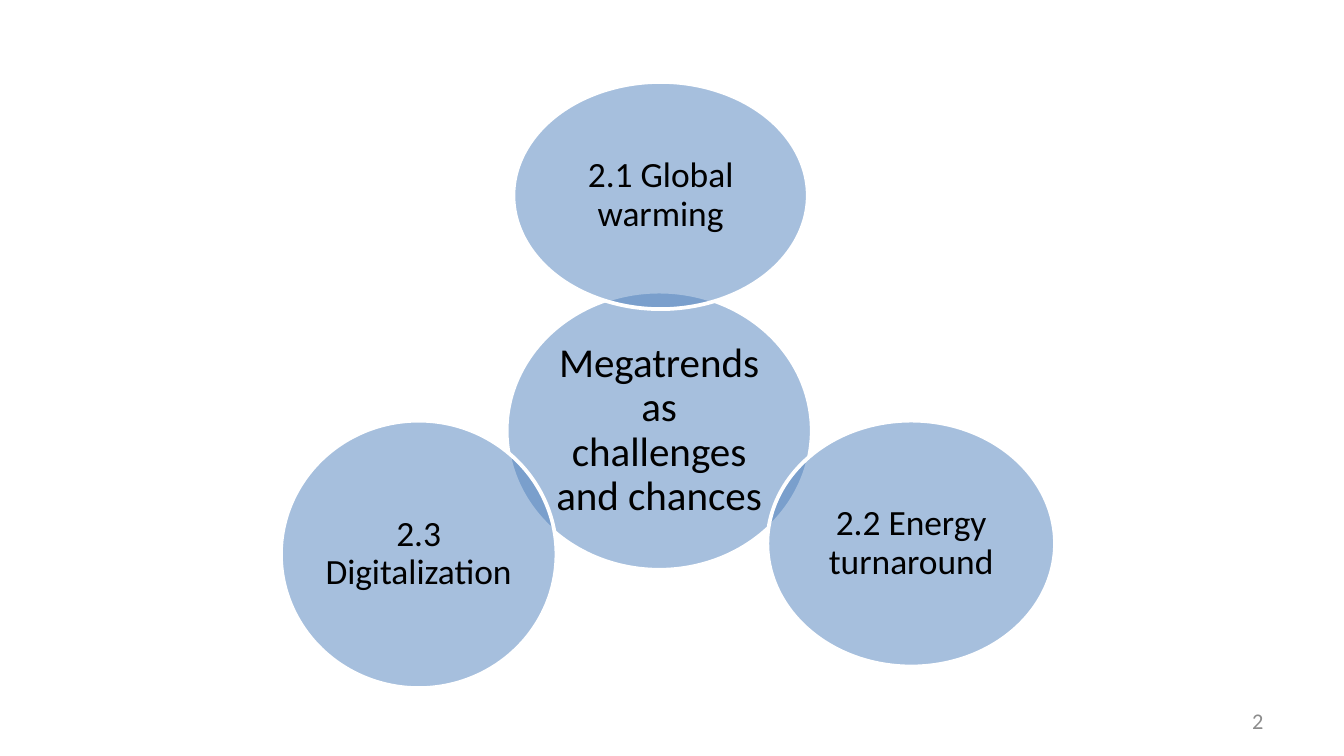
"""Builds the megatrends slide: a central circle overlapped by three topic circles."""
from dataclasses import dataclass

from lxml.etree import SubElement
from pptx import Presentation
from pptx.dml.color import RGBColor
from pptx.enum.shapes import MSO_SHAPE
from pptx.enum.text import MSO_ANCHOR, PP_ALIGN
from pptx.oxml.ns import qn
from pptx.util import Inches, Pt


@dataclass(frozen=True)
class Theme:
    font: str = "Calibri"
    circle: RGBColor = RGBColor(0x4F, 0x81, 0xBD)
    outline: RGBColor = RGBColor(0xFF, 0xFF, 0xFF)
    text: RGBColor = RGBColor(0x00, 0x00, 0x00)
    muted: RGBColor = RGBColor(0x8C, 0x8C, 0x8C)
    center_size: int = 22
    topic_size: int = 19
    number_size: int = 12
    opacity: int = 50000


theme = Theme()


def write_text(frame, text, size, color, alignment):
    frame.word_wrap = True
    frame.vertical_anchor = MSO_ANCHOR.MIDDLE
    para = frame.paragraphs[0]
    para.alignment = alignment
    span = para.add_run()
    span.text = text
    span.font.name = theme.font
    span.font.size = Pt(size)
    span.font.color.rgb = color
    return para


deck = Presentation()
deck.slide_width = Inches(10)
deck.slide_height = deck.slide_width * 9 // 16
page = deck.slides.add_slide(deck.slide_layouts[6])

number_box = page.shapes.add_textbox(Inches(7.17), Inches(5.21), Inches(2.33), Inches(0.3))
write_text(number_box.text_frame, "2", theme.number_size, theme.muted, PP_ALIGN.RIGHT)

circles = [
    ("Megatrends as challenges and chances", theme.center_size, 3.77, 2.17, 2.27, 2.07),
    ("2.1 Global warming", theme.topic_size, 3.82, 0.61, 2.19, 1.69),
    ("2.2 Energy turnaround", theme.topic_size, 5.71, 3.13, 2.14, 1.83),
    ("2.3 Digitalization", theme.topic_size, 2.09, 3.13, 2.05, 1.99),
]

for label, size, left, top, width, height in circles:
    circle = page.shapes.add_shape(
        MSO_SHAPE.OVAL, Inches(left), Inches(top), Inches(width), Inches(height)
    )
    circle.shadow.inherit = False
    circle.fill.solid()
    circle.fill.fore_color.rgb = theme.circle
    fill_color = circle.element.spPr.find(qn("a:solidFill"))[0]
    SubElement(fill_color, qn("a:alpha"), val=str(theme.opacity))
    circle.line.color.rgb = theme.outline
    circle.line.width = Pt(2)
    frame = circle.text_frame
    frame.margin_left = frame.margin_right = Inches(0.03)
    frame.margin_top = frame.margin_bottom = Inches(0.03)
    para = write_text(frame, label, size, theme.text, PP_ALIGN.CENTER)
    para.line_spacing = 0.9

deck.save("out.pptx")
